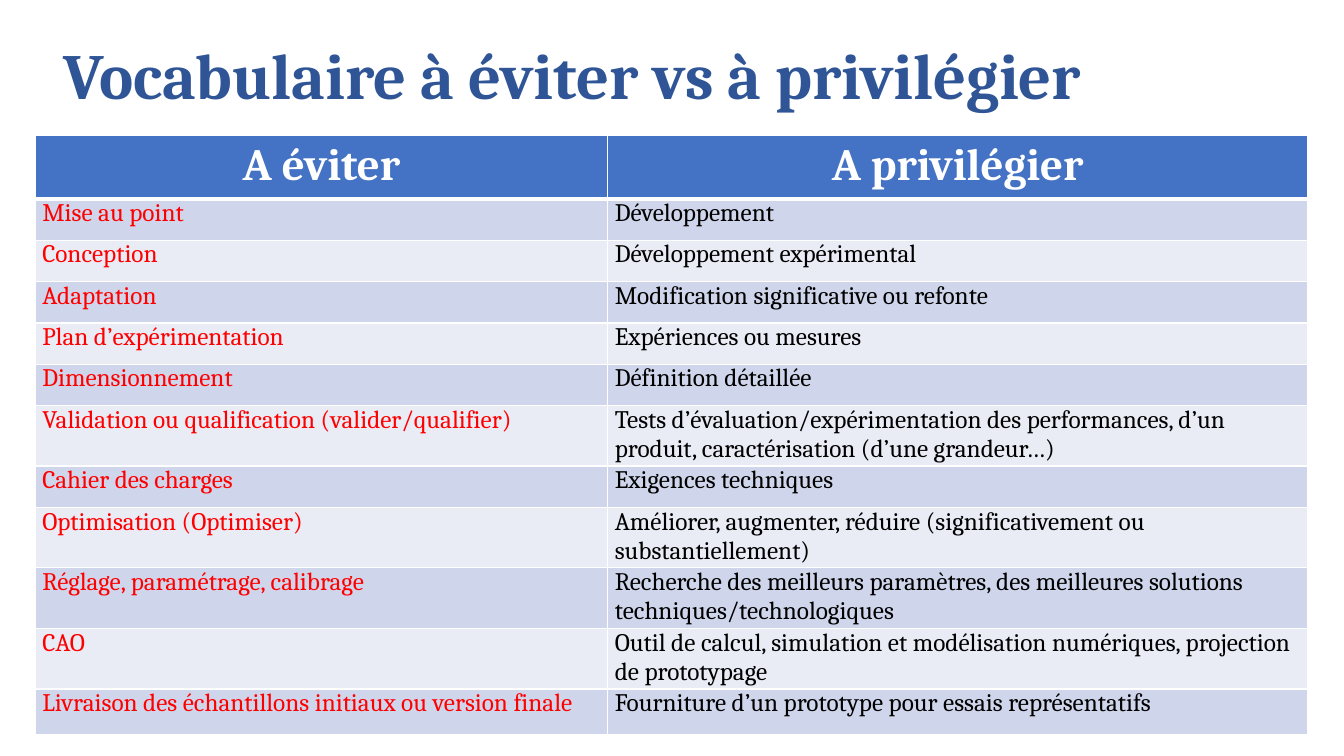
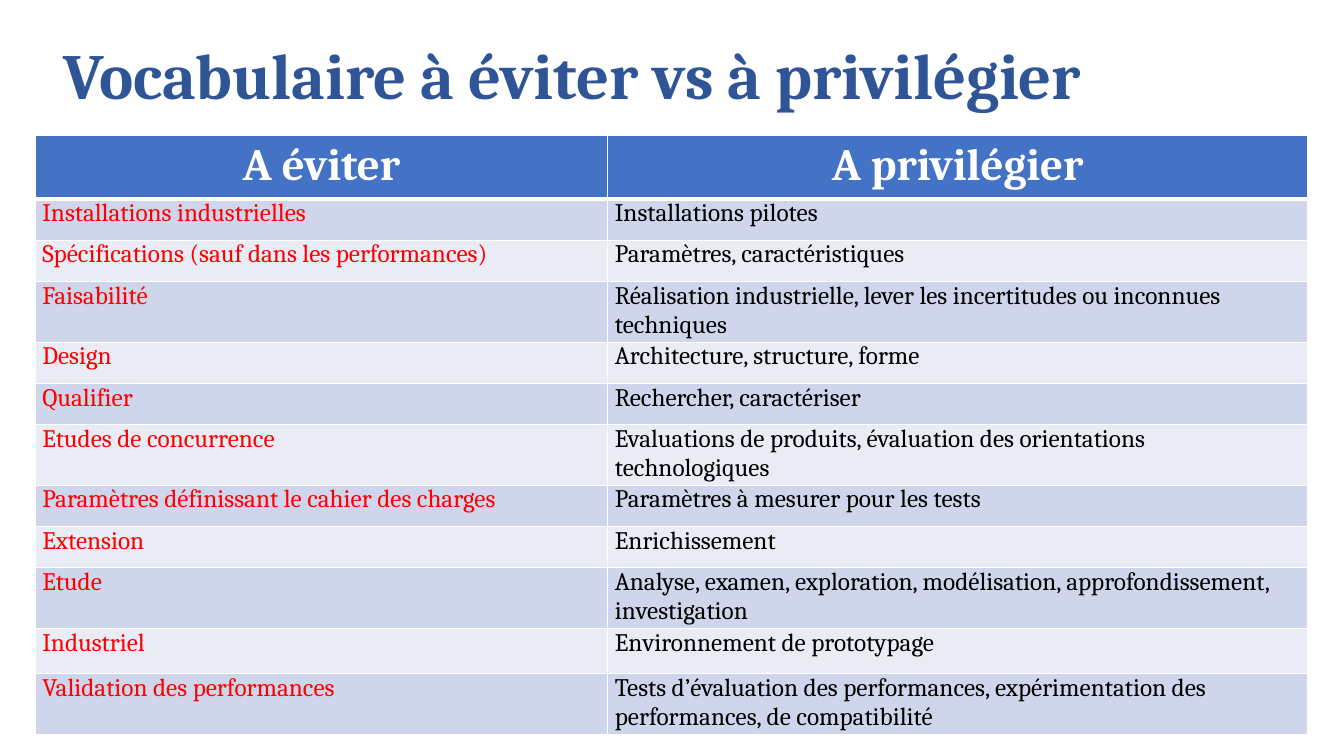
from dataclasses import dataclass

from lxml import etree
from pptx import Presentation, util as u
from pptx.dml.color import RGBColor
from pptx.enum import text
from pptx.oxml.ns import qn


@dataclass(frozen=True)
class Theme:
    font: str = "Cambria"
    title: str = "2F5597"
    header: str = "4472C4"
    bands: tuple = ("CFD5EA", "E9EBF5")
    white: str = "FFFFFF"
    avoid: str = "FF0000"
    prefer: str = "000000"
    title_size: int = 46
    header_size: int = 32
    body_size: int = 18
    rule: int = 1
    header_rule: int = 3


THEME = Theme()
SLIDE = (13.33, 7.5)
TITLE_BOX = (0.53, 0.4, 12.26, 0.75)
TABLE_BOX = (0.35, 1.34, 12.62, 5.92)
AVOID_SHARE = 0.45
ROW, TALL_ROW, HEADER_ROW = 0.41, 0.45, 0.54

TITLE = "Vocabulaire à éviter vs à privilégier"
HEADINGS = ("A éviter", "A privilégier")

# Each page: header row height, number of taller rows at the foot, word pairs
PAGES = [
    (HEADER_ROW, 1, [
        ("Mise au point", "Développement"),
        ("Conception", "Développement expérimental"),
        ("Adaptation", "Modification significative ou refonte"),
        ("Plan d’expérimentation", "Expériences ou mesures"),
        ("Dimensionnement", "Définition détaillée"),
        ("Validation ou qualification (valider/qualifier)",
         "Tests d’évaluation/expérimentation des performances, d’un produit, "
         "caractérisation (d’une grandeur…)"),
        ("Cahier des charges", "Exigences techniques"),
        ("Optimisation (Optimiser)",
         "Améliorer, augmenter, réduire (significativement ou substantiellement)"),
        ("Réglage, paramétrage, calibrage",
         "Recherche des meilleurs paramètres, des meilleures solutions "
         "techniques/technologiques"),
        ("CAO",
         "Outil de calcul, simulation et modélisation numériques, projection "
         "de prototypage"),
        ("Livraison des échantillons initiaux ou version finale",
         "Fourniture d’un prototype pour essais représentatifs"),
    ]),
    (ROW, 2, [
        ("Installations industrielles", "Installations pilotes"),
        ("Spécifications (sauf dans les performances)",
         "Paramètres, caractéristiques"),
        ("Faisabilité",
         "Réalisation industrielle, lever les incertitudes ou inconnues techniques"),
        ("Design", "Architecture, structure, forme"),
        ("Qualifier", "Rechercher, caractériser"),
        ("Etudes de concurrence",
         "Evaluations de produits, évaluation des orientations technologiques"),
        ("Paramètres définissant le cahier des charges",
         "Paramètres à mesurer pour les tests"),
        ("Extension", "Enrichissement"),
        ("Etude",
         "Analyse, examen, exploration, modélisation, approfondissement, "
         "investigation"),
        ("Industriel", "Environnement de prototypage"),
        ("Validation des performances",
         "Tests d’évaluation des performances, expérimentation des performances, "
         "de compatibilité"),
    ]),
]


def set_all(target, values):
    for name, value in values.items():
        setattr(target, name, value)


def write(para, words, size, color, bold):
    span = para.add_run()
    span.text = words
    set_all(span.font, {"name": THEME.font, "size": u.Pt(size), "bold": bold})
    span.font.color.rgb = RGBColor.from_string(color)


def add_title(page, box):
    frame = page.shapes.add_textbox(*map(u.Inches, box)).text_frame
    set_all(frame, {"word_wrap": True,
                    "vertical_anchor": text.MSO_ANCHOR.MIDDLE})
    para = frame.paragraphs[0]
    para.line_spacing = 0.9
    write(para, TITLE, THEME.title_size, THEME.title, True)


def set_borders(cell, top, bottom):
    """Draw white rules on the four sides; widths are in points."""
    properties = cell._tc.get_or_add_tcPr()
    widths = {"L": THEME.rule, "R": THEME.rule, "T": top, "B": bottom}
    for place, (side, width) in enumerate(widths.items()):
        line = etree.Element(qn(f"a:ln{side}"), w=str(u.Pt(width)))
        fill = etree.SubElement(line, qn("a:solidFill"))
        etree.SubElement(fill, qn("a:srgbClr"), val=THEME.white)
        properties.insert(place, line)


def fill_cell(cell, words, row, color):
    is_header = row == 0
    para = cell.text_frame.paragraphs[0]
    if is_header:
        fill = THEME.header
        para.alignment = text.PP_ALIGN.CENTER
        write(para, words, THEME.header_size, color, True)
    else:
        fill = THEME.bands[(row - 1) % 2]
        set_all(cell, {"margin_left": u.Inches(0.07), "margin_top": 0,
                       "margin_right": u.Inches(0.07), "margin_bottom": 0})
        write(para, words, THEME.body_size, color, False)
    cell.fill.solid()
    cell.fill.fore_color.rgb = RGBColor.from_string(fill)
    set_borders(cell,
                THEME.header_rule if row == 1 else THEME.rule,
                THEME.header_rule if is_header else THEME.rule)


def add_vocabulary(page, box, header_height, tall_rows, pairs):
    rows = [HEADINGS, *pairs]
    heights = ([header_height] + [ROW] * (len(pairs) - tall_rows)
               + [TALL_ROW] * tall_rows)
    table = page.shapes.add_table(len(rows), 2, *map(u.Inches, box)).table
    for column, share in zip(table.columns, (AVOID_SHARE, 1 - AVOID_SHARE)):
        column.width = u.Inches(box[2] * share)
    for index, (words, height) in enumerate(zip(rows, heights)):
        table.rows[index].height = u.Inches(height)
        colors = (THEME.avoid, THEME.prefer) if index else (THEME.white,) * 2
        for column, color in enumerate(colors):
            fill_cell(table.cell(index, column), words[column], index, color)


def main():
    deck = Presentation()
    deck.slide_width, deck.slide_height = map(u.Inches, SLIDE)
    for header_height, tall_rows, pairs in PAGES:
        page = deck.slides.add_slide(deck.slide_layouts[6])
        add_title(page, TITLE_BOX)
        add_vocabulary(page, TABLE_BOX, header_height, tall_rows, pairs)
    deck.save("out.pptx")


if __name__ == "__main__":
    main()
